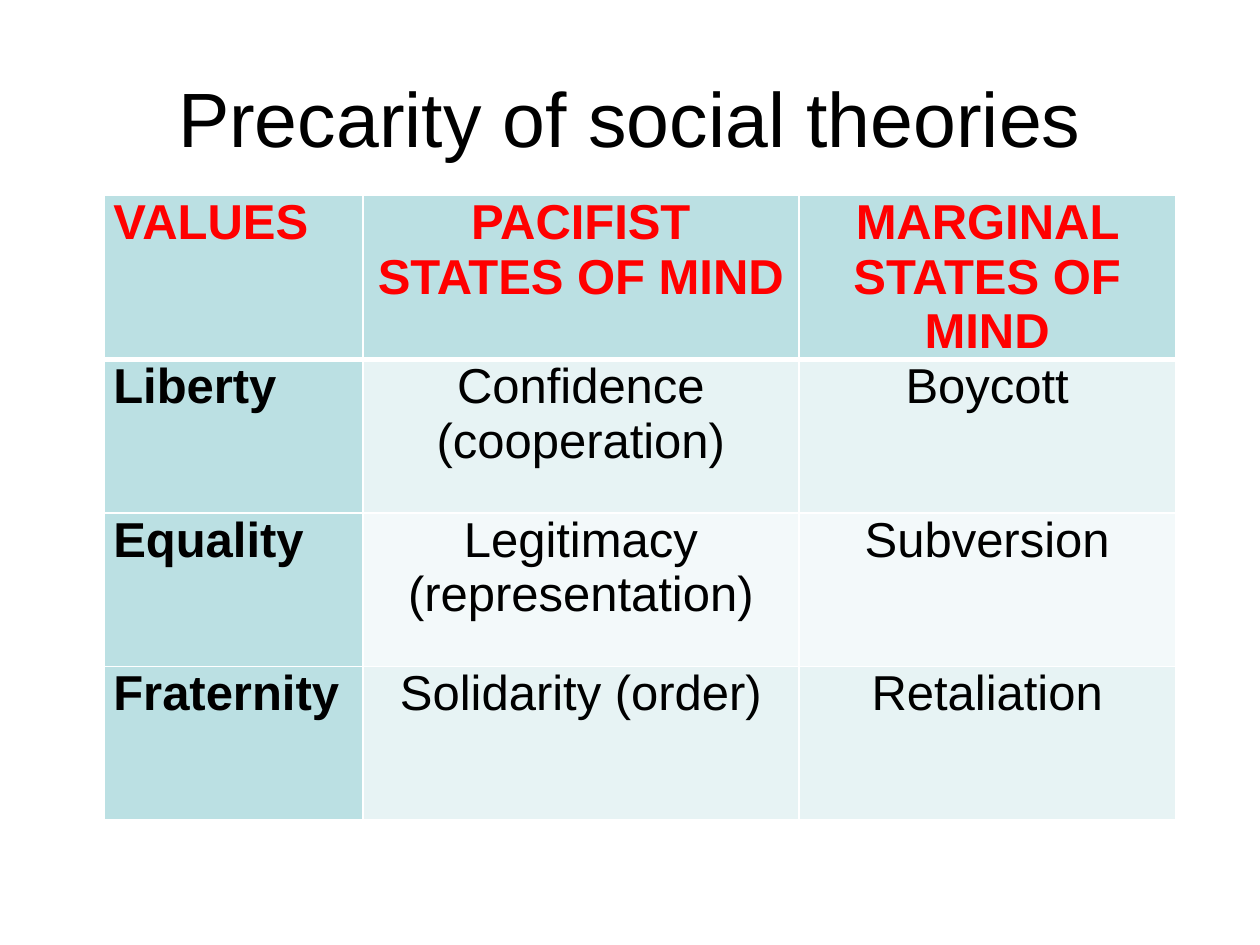
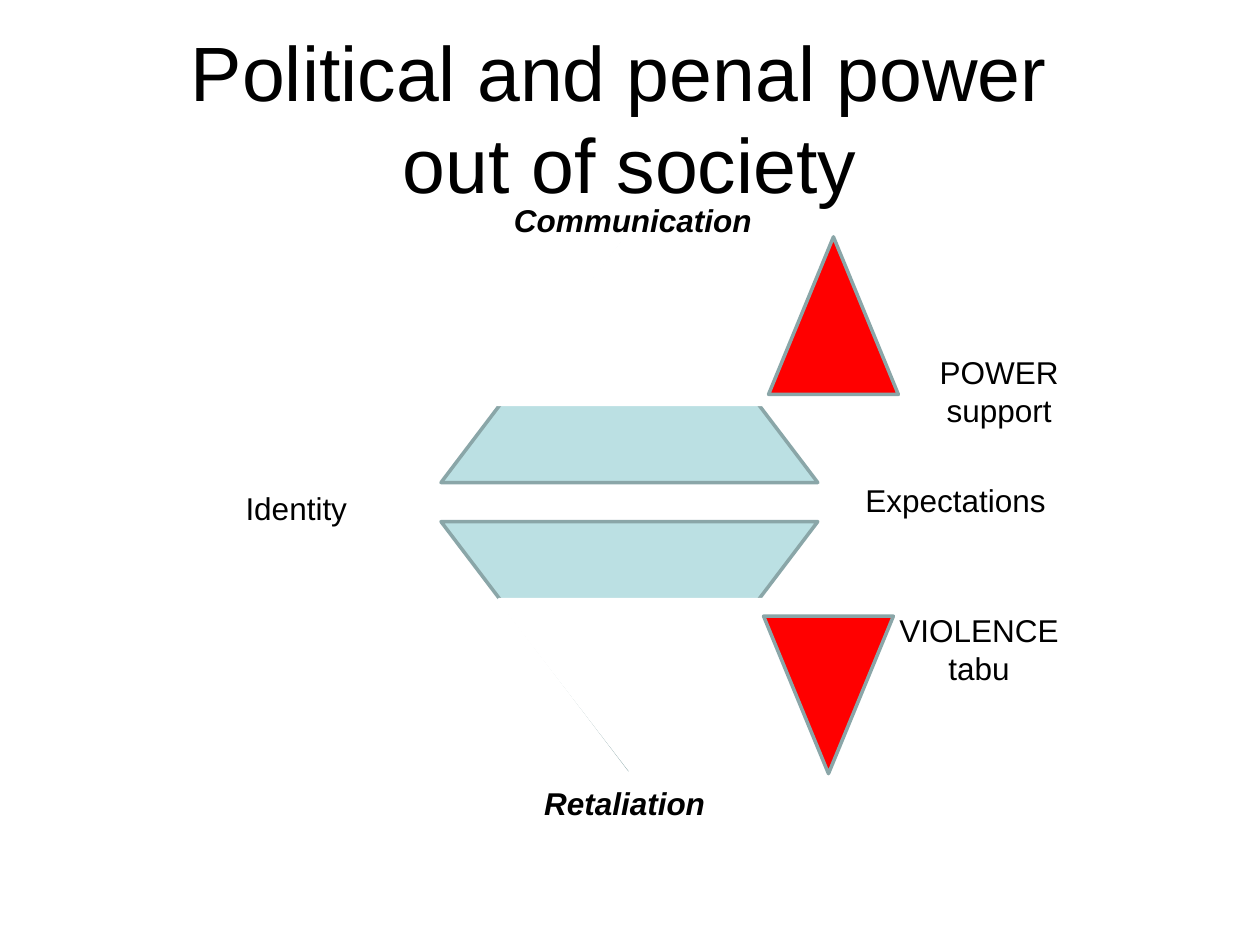
from dataclasses import dataclass

from lxml import etree
from pptx import Presentation
from pptx.dml.color import RGBColor
from pptx.enum.shapes import MSO_SHAPE
from pptx.enum.text import MSO_ANCHOR, MSO_AUTO_SIZE, PP_ALIGN
from pptx.oxml.ns import qn
from pptx.slide import Slide
from pptx.table import _Cell
from pptx.text.text import TextFrame
from pptx.util import Inches, Pt

TRIANGLE = MSO_SHAPE.ISOSCELES_TRIANGLE
MIDDLE = MSO_ANCHOR.MIDDLE
NO_FIT = MSO_AUTO_SIZE.NONE
GROW = MSO_AUTO_SIZE.SHAPE_TO_FIT_TEXT
LEFT, CENTER = PP_ALIGN.LEFT, PP_ALIGN.CENTER

BLACK = RGBColor(0x00, 0x00, 0x00)
WHITE = RGBColor(0xFF, 0xFF, 0xFF)
RED = RGBColor(0xFF, 0x00, 0x00)
TEAL = RGBColor(0xBB, 0xE0, 0xE3)
EDGE = RGBColor(0x8A, 0xA6, 0xA8)
BANDS = (RGBColor(0xE7, 0xF3, 0xF4), RGBColor(0xF3, 0xF9, 0xFA))

FONT = "Arial"
TITLE_ONLY = 5

COLS = (2.05, 3.46, 2.99)
ROW = 1.22
VALUES = (
    ("VALUES", "PACIFIST STATES OF MIND", "MARGINAL STATES OF MIND"),
    ("Liberty", "Confidence (cooperation)", "Boycott"),
    ("Equality", "Legitimacy (representation)", "Subversion"),
    ("Fraternity", "Solidarity (order)", "Retaliation"),
)


@dataclass
class Label:
    text: str
    left: float
    top: float
    width: float
    height: float = 0.4
    strong: bool = False


@dataclass
class Peak:
    left: float
    top: float
    width: float
    height: float
    fill: RGBColor
    line: RGBColor = EDGE
    down: bool = False


PEAKS = (
    Peak(3.5, 1.86, 2.99, 1.97, TEAL),
    Peak(3.5, 4.14, 2.99, 1.97, TEAL, down=True),
    Peak(6.1, 1.88, 1.03, 1.25, RED),
    Peak(6.06, 4.89, 1.03, 1.25, RED, down=True),
    # White peaks cut the tips off the teal ones
    Peak(3.95, 1.84, 2.11, 1.37, WHITE, WHITE),
    Peak(3.96, 4.76, 2.11, 1.37, WHITE, WHITE, down=True),
)
LABELS = (
    Label("Communication", 3.98, 1.55, 2.11, strong=True),
    Label("Retaliation", 4.22, 6.17, 1.56, strong=True),
    Label("Identity", 1.85, 3.83, 1.02),
    Label("POWER\nsupport", 7.36, 2.75, 1.16, 0.71),
    Label("VIOLENCE\ntabu", 7.04, 4.8, 1.48, 0.71),
    Label("Expectations", 6.77, 3.77, 1.65),
)


def style(frame: TextFrame, size: int, color: RGBColor = BLACK,
          bold: bool = False, italic: bool = False) -> None:
    for para in frame.paragraphs:
        for run in para.runs:
            font = run.font
            font.name, font.size = FONT, Pt(size)
            font.bold, font.italic = bold, italic
            font.color.rgb = color


def add_slide(deck: Presentation, title: str) -> Slide:
    slide = deck.slides.add_slide(deck.slide_layouts[TITLE_ONLY])
    box = slide.shapes.title
    box.left, box.top = Inches(0.5), Inches(0.3)
    box.width, box.height = Inches(9), Inches(1.25)
    frame = box.text_frame
    frame.text = title
    frame.auto_size = NO_FIT
    frame.vertical_anchor = MIDDLE
    frame.paragraphs[0].alignment = CENTER
    style(frame, 44)
    return slide


def add_border(cell: _Cell, side: str, width: int) -> None:
    line = etree.SubElement(cell._tc.get_or_add_tcPr(), qn(f"a:ln{side}"),
                            w=str(Pt(width)))
    fill = etree.SubElement(line, qn("a:solidFill"))
    etree.SubElement(fill, qn("a:srgbClr"), val=str(WHITE))


def fill_cell(cell: _Cell, text: str, row: int, col: int) -> None:
    head, side = row == 0, col == 0
    for edge in "LRTB":
        thick = (head and edge == "B") or (row == 1 and edge == "T")
        add_border(cell, edge, 3 if thick else 1)
    cell.fill.solid()
    cell.fill.fore_color.rgb = TEAL if head or side else BANDS[(row - 1) % 2]
    cell.margin_left = cell.margin_right = Inches(0.07)
    cell.margin_top = cell.margin_bottom = 0
    cell.text_frame.text = text
    cell.text_frame.paragraphs[0].alignment = LEFT if side else CENTER
    style(cell.text_frame, 28, RED if head else BLACK, head or side)


def add_values(slide: Slide) -> None:
    table = slide.shapes.add_table(
        len(VALUES), len(COLS), Inches(0.83), Inches(1.55),
        Inches(sum(COLS)), Inches(ROW * len(VALUES))).table
    for col, width in zip(table.columns, COLS):
        col.width = Inches(width)
    for r, texts in enumerate(VALUES):
        for c, text in enumerate(texts):
            fill_cell(table.cell(r, c), text, r, c)


def add_peak(slide: Slide, peak: Peak) -> None:
    shape = slide.shapes.add_shape(
        TRIANGLE, Inches(peak.left), Inches(peak.top),
        Inches(peak.width), Inches(peak.height))
    shape.shadow.inherit = False
    shape.rotation = 180 if peak.down else 0
    shape.fill.solid()
    shape.fill.fore_color.rgb = peak.fill
    shape.line.color.rgb = peak.line
    shape.line.width = Pt(2)


def add_label(slide: Slide, label: Label) -> None:
    frame = slide.shapes.add_textbox(
        Inches(label.left), Inches(label.top),
        Inches(label.width), Inches(label.height)).text_frame
    frame.text = label.text
    frame.word_wrap = False
    frame.auto_size = GROW
    for para in frame.paragraphs[1:]:
        para.alignment = CENTER
    style(frame, 18, bold=label.strong, italic=label.strong)


def main() -> None:
    deck = Presentation()
    deck.slide_width, deck.slide_height = Inches(10), Inches(7.5)

    add_values(add_slide(deck, "Precarity of social theories"))

    power = add_slide(deck, "Political and penal power \vout of society")
    for label in LABELS:
        add_label(power, label)
    for peak in PEAKS:
        add_peak(power, peak)

    deck.save("out.pptx")


if __name__ == "__main__":
    main()
